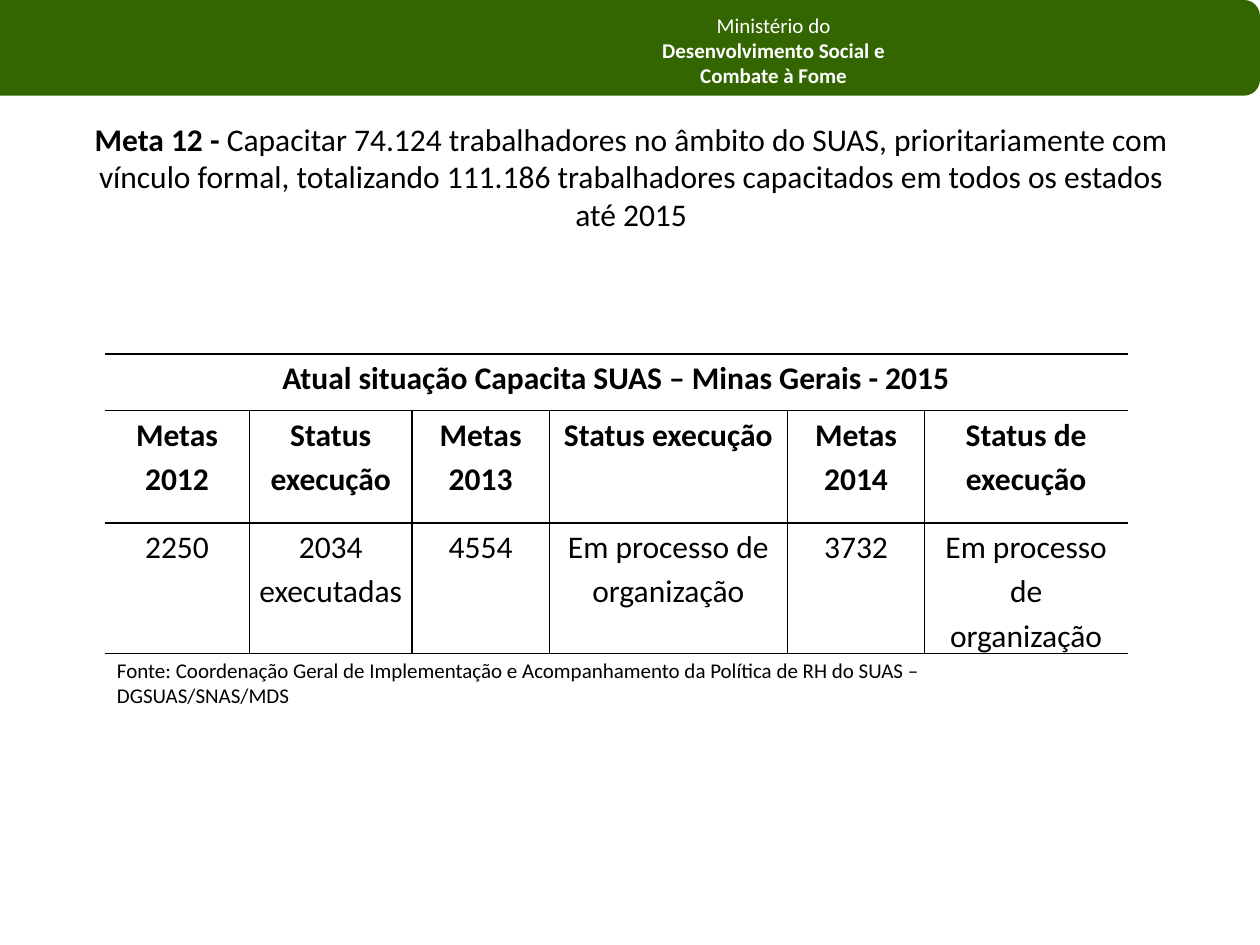
from pptx import Presentation
from pptx.dml.color import RGBColor
from pptx.enum.shapes import MSO_SHAPE as Shape
from pptx.enum.text import MSO_ANCHOR as Anchor, PP_ALIGN as Align
from pptx.oxml.ns import qn
from pptx.util import Inches, Pt
from lxml.etree import SubElement

COLORS = {"green": "336600", "white": "FFFFFF", "black": "000000"}


def add_text(para, text, size=18, bold=False, color="black", align=Align.CENTER,
             spacing=None):
    para.alignment = align
    if spacing:
        para.line_spacing = spacing
    span = para.add_run()
    span.text = text
    span.font.name = "Calibri"
    span.font.size = Pt(size)
    span.font.bold = bold
    span.font.color.rgb = RGBColor.from_string(COLORS[color])


def add_border(cell, side, visible):
    line = SubElement(cell._tc.get_or_add_tcPr(), qn(f"a:ln{side}"), w=str(Pt(1)))
    if visible:
        fill = SubElement(line, qn("a:solidFill"))
        SubElement(fill, qn("a:srgbClr"), val=COLORS["black"])
    else:
        SubElement(line, qn("a:noFill"))


deck = Presentation()
deck.slide_width, deck.slide_height = Inches(10), Inches(7.5)
page = deck.slides.add_slide(deck.slide_layouts[5])

# Green band, bleeding past the left edge so only its right corners look round
band = page.shapes.add_shape(Shape.ROUNDED_RECTANGLE, Inches(-0.2), Inches(0),
                             Inches(10.2), Inches(0.76))
band.shadow.inherit = False
band.fill.solid()
band.fill.fore_color.rgb = RGBColor.from_string(COLORS["green"])
band.line.fill.background()

# Ministry name
ministry = page.shapes.add_textbox(Inches(4.84), Inches(0.05), Inches(2.6), Inches(0.71))
frame = ministry.text_frame
frame.word_wrap = True
for index, text in enumerate(["Ministério do", "Desenvolvimento Social e", "Combate à Fome"]):
    para = frame.add_paragraph() if index else frame.paragraphs[0]
    add_text(para, text, size=12, bold=index > 0, color="white")

# Title
title = page.shapes.title
title.left, title.top = Inches(0.51), Inches(0.6)
title.width, title.height = Inches(9), Inches(1.25)
frame = title.text_frame
frame.word_wrap = True
frame.vertical_anchor = Anchor.BOTTOM
frame.margin_bottom = Inches(0)
add_text(frame.paragraphs[0], "Meta 12 -", bold=True)
add_text(frame.paragraphs[0], " Capacitar 74.124 trabalhadores no âmbito do SUAS, "
         "prioritariamente com vínculo formal, totalizando 111.186 trabalhadores "
         "capacitados em todos os estados até 2015")

# Table of targets and their status
rows = [
    ["Atual situação Capacita SUAS – Minas Gerais - 2015", "", "", "", "", ""],
    ["Metas 2012", "Status execução", "Metas 2013", "Status execução",
     "Metas 2014", "Status de execução"],
    ["2250", "2034 executadas", "4554", "Em processo de organização",
     "3732", "Em processo de organização"],
]
widths = [1.15, 1.29, 1.09, 1.89, 1.09, 1.61]
heights = [0.45, 0.89, 0.92]
table = page.shapes.add_table(len(rows), len(widths), Inches(0.83), Inches(2.81),
                              Inches(sum(widths)), Inches(sum(heights))).table
table.first_row = table.horz_banding = False
for column, width in zip(table.columns, widths):
    column.width = Inches(width)
for row, height in zip(table.rows, heights):
    row.height = Inches(height)
last = len(widths) - 1
table.cell(0, 0).merge(table.cell(0, last))

for r, texts in enumerate(rows):
    for c, text in enumerate(texts):
        cell = table.cell(r, c)
        cell.margin_left = cell.margin_right = Inches(0.07)
        cell.margin_top = cell.margin_bottom = Inches(0)
        # Horizontal rules everywhere, vertical ones only between columns
        add_border(cell, "L", r > 0 and c > 0)
        add_border(cell, "R", r > 0 and c < last)
        add_border(cell, "T", True)
        add_border(cell, "B", True)
        cell.fill.solid()
        cell.fill.fore_color.rgb = RGBColor.from_string(COLORS["white"])
        if text:
            add_text(cell.text_frame.paragraphs[0], text, bold=r < 2, spacing=1.15)

# Source note
source = page.shapes.add_textbox(Inches(0.83), Inches(5.17), Inches(7.32), Inches(0.5))
source.text_frame.word_wrap = True
add_text(source.text_frame.paragraphs[0],
         "Fonte: Coordenação Geral de Implementação e Acompanhamento da Política "
         "de RH do SUAS – DGSUAS/SNAS/MDS", size=12, align=Align.LEFT)

deck.save("out.pptx")
